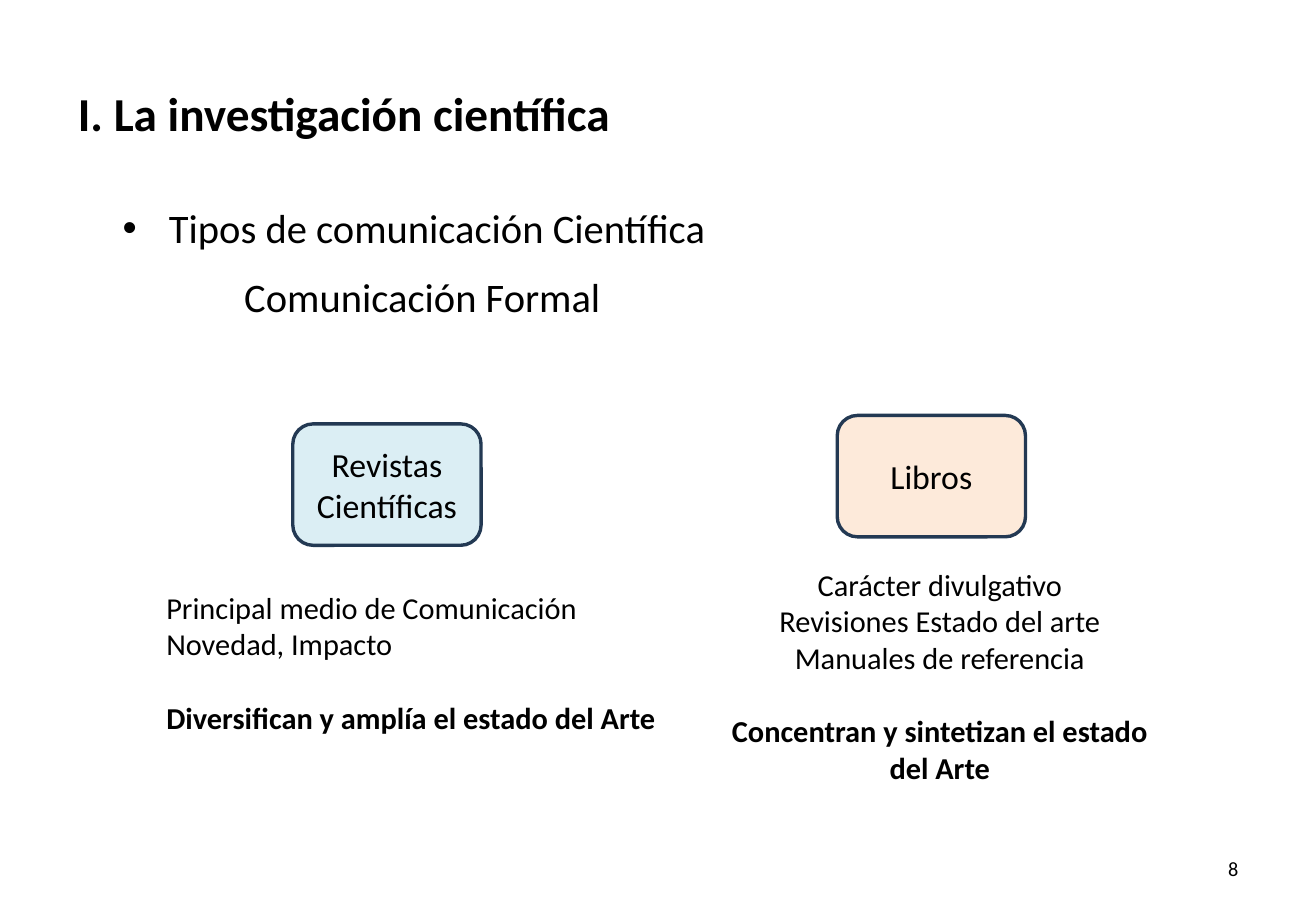
from dataclasses import dataclass

from lxml import etree
from pptx import Presentation
from pptx.dml.color import RGBColor
from pptx.enum.shapes import MSO_SHAPE
from pptx.enum.text import MSO_ANCHOR, MSO_AUTO_SIZE, PP_ALIGN
from pptx.oxml.ns import qn
from pptx.util import Inches, Pt

LEFT, CENTER, RIGHT, JUSTIFY = PP_ALIGN.LEFT, PP_ALIGN.CENTER, PP_ALIGN.RIGHT, PP_ALIGN.JUSTIFY
MIDDLE, TOP = MSO_ANCHOR.MIDDLE, MSO_ANCHOR.TOP
NO_AUTOFIT = MSO_AUTO_SIZE.NONE
ROUNDED = MSO_SHAPE.ROUNDED_RECTANGLE

FONT = "Calibri"
COLORS = {"text": "000000", "outline": "233953", "journals": "DBEEF4", "books": "FDEADA"}
WIDTH, HEIGHT = Inches(10.83), Inches(7.5)
CARD_SIZE = (14.31, 13.33)
CONCLUSION_GAP = Pt(22)


@dataclass
class Box:
    """Left, top, width and height in percent of the slide's size."""
    left: float
    top: float
    width: float
    height: float

    def emu(self) -> tuple[int, int, int, int]:
        return (int(WIDTH * self.left / 100), int(HEIGHT * self.top / 100),
                int(WIDTH * self.width / 100), int(HEIGHT * self.height / 100))


@dataclass
class Channel:
    """A means of publication: its card, the features below and their bold conclusion."""
    name: str
    color: str
    card: Box
    features: list[str]
    conclusion: list[str]
    caption: Box
    align: PP_ALIGN


CHANNELS = [
    Channel("Revistas Científicas", "journals", Box(22.25, 46.53, *CARD_SIZE),
            ["Principal medio de Comunicación", "Novedad, Impacto"],
            ["Diversifican y amplía el estado del Arte"],
            Box(11.73, 64, 39.34, 17.47), LEFT),
    Channel("Libros", "books", Box(63.62, 45.6, *CARD_SIZE),
            ["Carácter divulgativo", "Revisiones Estado del arte", "Manuales de referencia"],
            ["Concentran y sintetizan el estado", "del Arte"],
            Box(54.57, 61.47, 33.7, 25.6), CENTER),
]


def rgb(name: str) -> RGBColor:
    return RGBColor.from_string(COLORS[name])


def place(sp, box: Box) -> None:
    sp.left, sp.top, sp.width, sp.height = box.emu()


def write(sp, lines: list[str], size: float, align: PP_ALIGN,
          anchor: MSO_ANCHOR = TOP, wrap: bool = True, bold: bool = False) -> None:
    tf = sp.text_frame
    tf.text = "\n".join(lines)
    tf.word_wrap = wrap
    tf.auto_size = NO_AUTOFIT
    tf.vertical_anchor = anchor
    for p in tf.paragraphs:
        p.alignment = align
        for r in p.runs:
            r.font.name, r.font.size, r.font.bold = FONT, Pt(size), bold
            r.font.color.rgb = rgb("text")


def set_bullet(p, margin: float, indent: float, char: str = "") -> None:
    pPr = p._p.get_or_add_pPr()
    pPr.set("marL", str(Inches(margin)))
    pPr.set("indent", str(Inches(indent)))
    if char:
        etree.SubElement(pPr, qn("a:buFont")).set("typeface", "Arial")
        etree.SubElement(pPr, qn("a:buChar")).set("char", char)
    else:
        etree.SubElement(pPr, qn("a:buNone"))


def add_body(sp) -> None:
    place(sp, Box(8.4, 21.6, 80.15, 14.4))
    write(sp, ["Tipos de comunicación Científica", "Comunicación Formal"], 24, JUSTIFY)
    topic, subtopic = sp.text_frame.paragraphs
    for p in (topic, subtopic):
        p.space_before = p.space_after = Pt(6)
    set_bullet(topic, 0.38, -0.38, "•")
    set_bullet(subtopic, 1, 0)


def add_channel(s, channel: Channel) -> None:
    card = s.shapes.add_shape(ROUNDED, *channel.card.emu())
    card.shadow.inherit = False
    card.fill.solid()
    card.fill.fore_color.rgb = rgb(channel.color)
    card.line.color.rgb = rgb("outline")
    card.line.width = Pt(2)
    write(card, [channel.name], 20, CENTER, MIDDLE)

    tb = s.shapes.add_textbox(*channel.caption.emu())
    write(tb, channel.features + channel.conclusion, 18, channel.align, wrap=False)
    conclusion = tb.text_frame.paragraphs[len(channel.features):]
    conclusion[0].space_before = CONCLUSION_GAP
    for p in conclusion:
        p.runs[0].font.bold = True


def main() -> None:
    prs = Presentation()
    prs.slide_width, prs.slide_height = WIDTH, HEIGHT
    s = prs.slides.add_slide(prs.slide_layouts[1])

    title = s.shapes.title
    place(title, Box(5, 4, 90, 16.67))
    write(title, ["I. La investigación científica"], 28, LEFT, MIDDLE, bold=True)
    add_body(s.placeholders[1])
    for channel in CHANNELS:
        add_channel(s, channel)

    number = s.shapes.add_textbox(*Box(71.65, 92.67, 23.36, 5.33).emu())
    write(number, ["8"], 12, RIGHT, MIDDLE)
    prs.save("out.pptx")


if __name__ == "__main__":
    main()
